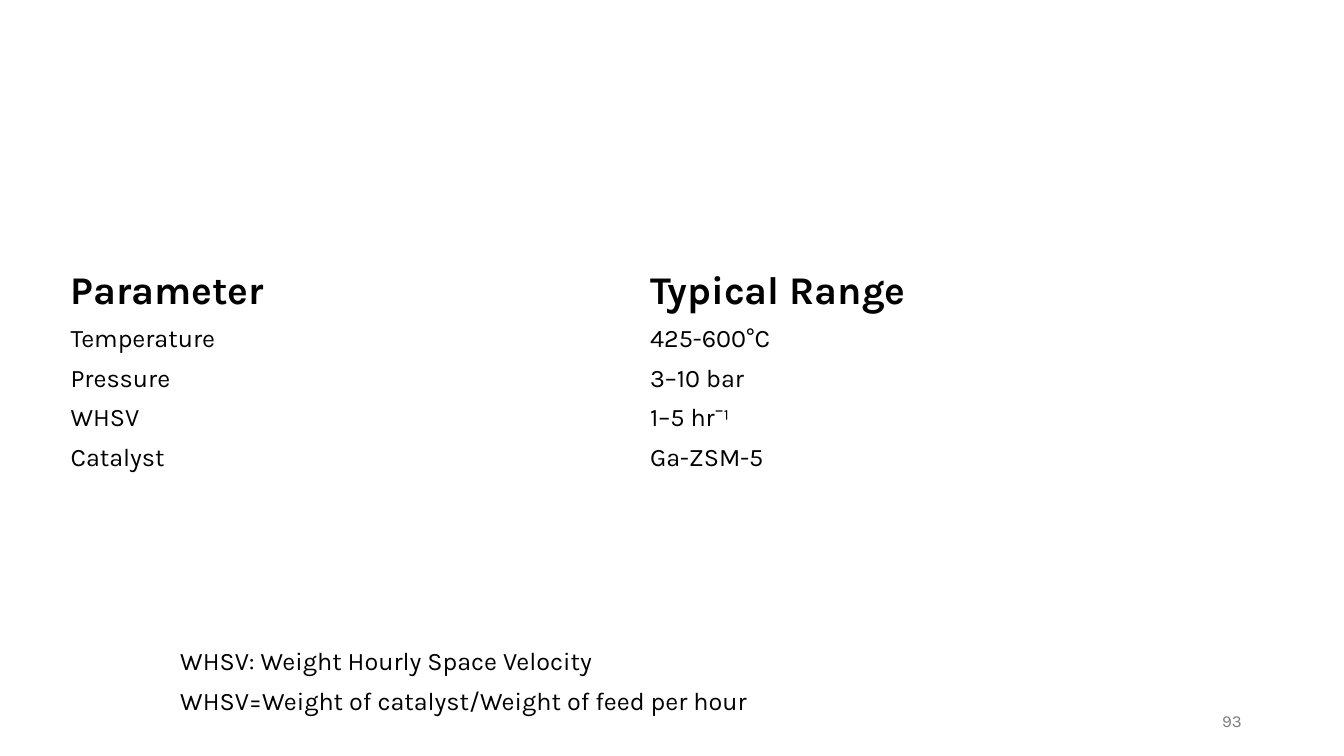
from pptx import Presentation
from pptx.dml.color import RGBColor
from pptx.enum.text import MSO_ANCHOR as Anchor, PP_ALIGN as Align
from pptx.util import Pt

FONT = "Karla"
COLORS = {"text": "000000", "number": "797979"}
ROWS = [
    ("Parameter", "Typical Range"),
    ("Temperature", "425-600°C"),
    ("Pressure", "3–10 bar"),
    ("WHSV", "1–5 hr⁻¹"),
    ("Catalyst", "Ga-ZSM-5"),
]
NOTES = [
    "WHSV: Weight Hourly Space Velocity",
    "WHSV=Weight of catalyst/Weight of feed per hour",
]
HEADER_HEIGHT, ROW_HEIGHT = 40, 28.3
NOTE_HEIGHT = 28.8


def write(frame, text, size, color="text", bold=False, align=Align.LEFT):
    para = frame.paragraphs[0]
    para.text = text
    para.alignment = align
    para.font.name = FONT
    para.font.size = Pt(size)
    para.font.bold = bold
    para.font.color.rgb = RGBColor.from_string(COLORS[color])


def add_text(page, left, top, width, text, size, anchor=Anchor.TOP, **style):
    box = page.shapes.add_textbox(Pt(left), Pt(top), Pt(width), Pt(NOTE_HEIGHT))
    box.text_frame.word_wrap = True
    box.text_frame.vertical_anchor = anchor
    write(box.text_frame, text, size, **style)


def add_parameter_table(page, left, top, width):
    height = HEADER_HEIGHT + ROW_HEIGHT * (len(ROWS) - 1)
    table = page.shapes.add_table(
        len(ROWS), 2, Pt(left), Pt(top), Pt(width), Pt(height)
    ).table
    table.first_row = table.horz_banding = False
    for index, values in enumerate(ROWS):
        header = index == 0
        table.rows[index].height = Pt(HEADER_HEIGHT if header else ROW_HEIGHT)
        for cell, value in zip(table.rows[index].cells, values):
            cell.fill.background()
            cell.vertical_anchor = Anchor.MIDDLE
            write(cell.text_frame, value, 28 if header else 18, bold=header)


def main():
    deck = Presentation()
    deck.slide_width, deck.slide_height = Pt(960), Pt(540)
    page = deck.slides.add_slide(deck.slide_layouts[6])
    add_parameter_table(page, 43.2, 187.9, 828)
    add_text(page, 678.2, 500.4, 216, "93", 12, Anchor.MIDDLE,
             color="number", align=Align.RIGHT)
    for index, note in enumerate(NOTES):
        add_text(page, 121.7, 457.2 + index * NOTE_HEIGHT, 479.5, note, 18)
    deck.save("out.pptx")


if __name__ == "__main__":
    main()
